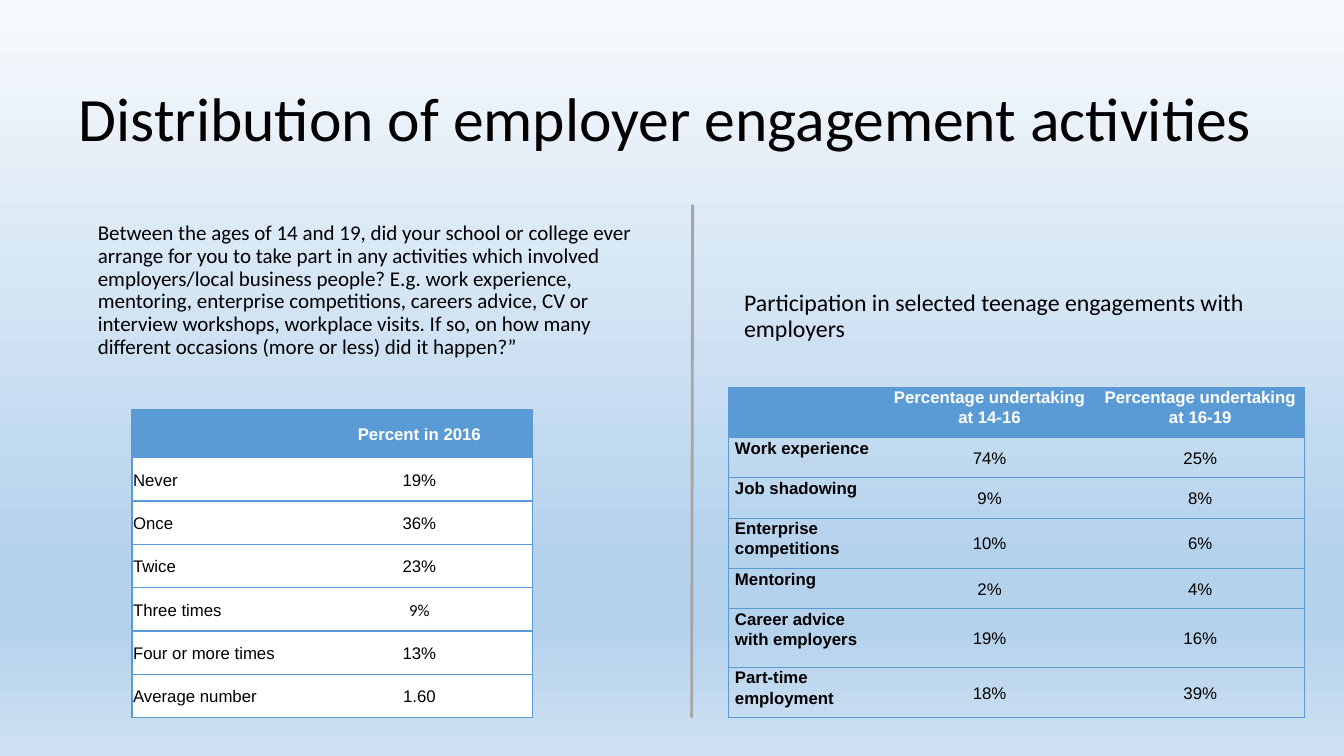
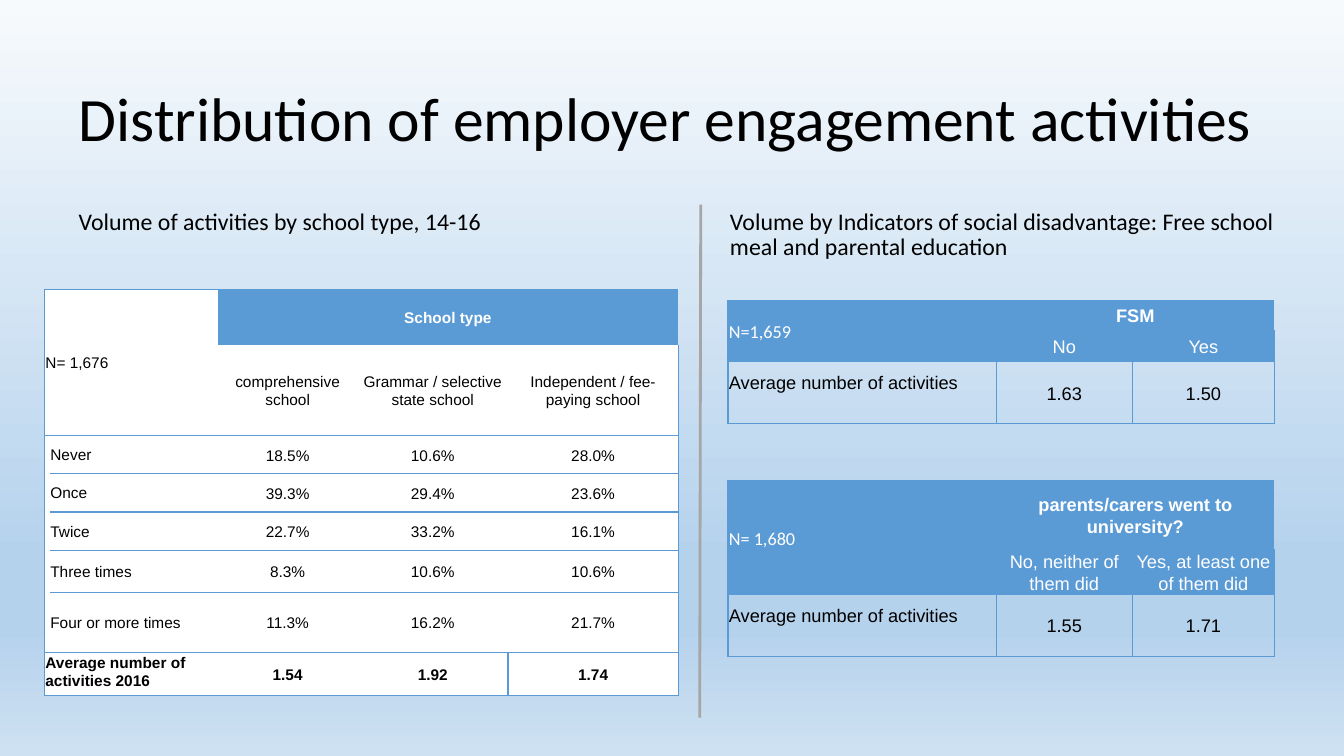
from lxml.etree import SubElement
from pptx import Presentation
from pptx.dml.color import RGBColor
from pptx.enum.shapes import MSO_CONNECTOR
from pptx.enum.text import MSO_ANCHOR, MSO_AUTO_SIZE, PP_ALIGN
from pptx.oxml.ns import qn
from pptx.util import Inches, Pt

BLUE, WHITE, BLACK, GREY = "5B9BD5", "FFFFFF", "000000", "A6A6A6"
BACKGROUND_STOPS = [(0, "F7FAFD"), (74, "B5D2EC"), (83, "B5D2EC"), (100, "CEE1F2")]
PLAIN_TABLE_STYLE = "{2D5ABB26-0587-4C30-8999-92F81FD0307C}"


def color(hex_code):
    return RGBColor.from_string(hex_code)


def write(frame, text, size=12, font="Arial", ink=BLACK, bold=False,
          align=PP_ALIGN.LEFT, spacing=1.07, indent=None):
    paragraph = frame.paragraphs[0]
    if indent is not None:
        properties = paragraph._p.get_or_add_pPr()
        properties.set("marL", str(Inches(indent)))
        properties.set("indent", "0")
        SubElement(properties, qn("a:buNone"))
    paragraph.alignment = align
    paragraph.line_spacing = spacing
    paragraph.space_before = Pt(0)
    run = paragraph.add_run()
    run.text = text
    run.font.size = Pt(size)
    run.font.name = font
    run.font.bold = bold
    run.font.color.rgb = color(ink)


class Deck:
    def __init__(self):
        self.presentation = Presentation()
        self.presentation.slide_width = Inches(13.33)
        self.presentation.slide_height = Inches(7.5)
        self.slide = None
        self.paint_background()

    def paint_background(self):
        master = self.presentation.slide_master
        fill = master.background.fill
        fill.gradient()
        fill.gradient_angle = 270
        stops = master.element.find(".//" + qn("a:gsLst"))
        for stop in list(stops):
            stops.remove(stop)
        for percent, shade in BACKGROUND_STOPS:
            stop = SubElement(stops, qn("a:gs"), pos=str(percent * 1000))
            SubElement(stop, qn("a:srgbClr"), val=shade)

    def new_slide(self, title, divider_x):
        layout = self.presentation.slide_layouts[3]
        self.slide = self.presentation.slides.add_slide(layout)
        self.placeholder(0, title, (0.68, 0.48, 12.21, 1.45), size=44)
        self.divider(divider_x)

    def placeholder(self, index, text, box, **style):
        holder = self.slide.placeholders[index]
        holder.left, holder.top, holder.width, holder.height = map(Inches, box)
        frame = holder.text_frame
        frame.word_wrap = True
        frame.auto_size = MSO_AUTO_SIZE.NONE
        frame.vertical_anchor = MSO_ANCHOR.TOP if index else MSO_ANCHOR.MIDDLE
        write(frame, text, font="Calibri", spacing=0.9, **style)

    def heading(self, index, text, box, size=17, indent=0):
        self.placeholder(index, text, box, size=size, indent=indent)

    def divider(self, x):
        line = self.slide.shapes.add_connector(
            MSO_CONNECTOR.STRAIGHT, Inches(x), Inches(2.03), Inches(x - 0.01), Inches(7.12))
        line.line.color.rgb = color(GREY)
        line.line.width = Pt(2)
        SubElement(line._element.spPr, qn("a:effectLst"))

    def border(self, cell, sides, points=1):
        properties = cell._tc.get_or_add_tcPr()
        for side in "BTRL":
            if side in sides:
                edge = SubElement(properties, qn("a:ln" + side), w=str(Pt(points)))
                SubElement(SubElement(edge, qn("a:solidFill")), qn("a:srgbClr"), val=BLUE)
                properties.insert(0, edge)

    def table(self, corner, widths, heights, texts, look, rows_ruled, columns_ruled,
              merges=(), points=1):
        grid = self.slide.shapes.add_table(
            len(heights), len(widths), *map(Inches, (*corner, sum(widths), sum(heights)))).table
        grid.first_row = grid.horz_banding = False
        grid._tbl.tblPr.find(qn("a:tableStyleId")).text = PLAIN_TABLE_STYLE
        for column, width in zip(grid.columns, widths):
            column.width = Inches(width)
        for row, height in zip(grid.rows, heights):
            row.height = Inches(height)
        owner = {}
        for top, left, bottom, right in merges:
            grid.cell(top, left).merge(grid.cell(bottom, right))
            for r in range(top, bottom + 1):
                for c in range(left, right + 1):
                    owner[r, c] = (top, left)
        for r in range(len(heights)):
            for c in range(len(widths)):
                cell = grid.cell(r, c)
                edges = {"L": (c in columns_ruled, (r, c - 1)),
                         "R": (c + 1 in columns_ruled, (r, c + 1)),
                         "T": (r in rows_ruled, (r - 1, c)),
                         "B": (r + 1 in rows_ruled, (r + 1, c))}
                here = owner.get((r, c), (r, c))
                sides = [side for side, (ruled, neighbour) in edges.items()
                         if ruled and owner.get(neighbour, neighbour) != here]
                self.border(cell, sides, points)
                self.fill_cell(cell, texts[r][c], **look(r, c))
        return grid

    def fill_cell(self, cell, text, fill=None, inset=(0.01, 0.01),
                  anchor=MSO_ANCHOR.MIDDLE, **style):
        if fill:
            cell.fill.solid()
            cell.fill.fore_color.rgb = color(fill)
        else:
            cell.fill.background()
        side, top = inset
        cell.margin_left = cell.margin_right = Inches(side)
        cell.margin_top, cell.margin_bottom = Inches(top), 0
        cell.vertical_anchor = anchor
        if text:
            write(cell.text_frame, text, **style)


def column_align(c):
    return PP_ALIGN.CENTER if c else PP_ALIGN.LEFT


def occasions_look(r, c):
    if r == 0:
        return dict(fill=BLUE, ink=WHITE, bold=True, align=column_align(c))
    font = "Calibri" if (r, c) == (4, 1) else "Arial"
    return dict(fill=WHITE, align=column_align(c), font=font)


def participation_look(r, c):
    header = r == 0
    return dict(fill=BLUE if header else None, ink=WHITE if header else BLACK,
                bold=header or c == 0, align=column_align(c), inset=(0.07, 0),
                anchor=MSO_ANCHOR.TOP if header or c == 0 else MSO_ANCHOR.MIDDLE)


def school_look(r, c):
    style = dict(size=11, fill=WHITE, align=column_align(c // 3), bold=r == 7)
    if r == 0 and c >= 3:
        style.update(fill=BLUE, ink=WHITE, bold=True)
    if r == 7 and c == 0:
        style.update(anchor=MSO_ANCHOR.TOP)
    if c == 1:
        style.update(inset=(0, 0))
    return style


def disadvantage_look(r, c):
    style = dict(size=13, align=column_align(c))
    if r < 2:
        style.update(fill=BLUE, ink=WHITE, bold=r == 0 and c > 0,
                     font="Arial" if c else "Calibri")
    elif c == 0:
        style.update(anchor=MSO_ANCHOR.TOP, inset=(0.01, 0.1))
    return style


def main():
    deck = Deck()
    title = "Distribution of employer engagement activities"

    deck.new_slide(title, 6.87)
    deck.heading(1, "Between the ages of 14 and 19, did your school or college ever arrange for you "
                 "to take part in any activities which involved employers/local business people? "
                 "E.g. work experience, mentoring, enterprise competitions, careers advice, CV or "
                 "interview workshops, workplace visits. If so, on how many different occasions "
                 "(more or less) did it happen?”", (0.68, 2.16, 6, 1.84), size=15, indent=0.19)
    deck.heading(2, "Participation in selected teenage engagements with employers",
                 (7.28, 2.84, 5.67, 0.83))
    occasions = [
        ("", "Percent in 2016"),
        ("Never", "19%"),
        ("Once", "36%"),
        ("Twice", "23%"),
        ("Three times", "9%"),
        ("Four or more times", "13%"),
        ("Average number", "1.60"),
    ]
    deck.table((1.31, 4.06), (1.73, 2.24), [0.48] + [0.43] * 6, occasions, occasions_look,
               range(8), {0, 2})
    participation = [
        ("", "Percentage undertaking at 14-16", "Percentage undertaking at 16-19"),
        ("Work experience", "74%", "25%"),
        ("Job shadowing", "9%", "8%"),
        ("Enterprise competitions", "10%", "6%"),
        ("Mentoring", "2%", "4%"),
        ("Career advice with employers", "19%", "16%"),
        ("Part-time employment", "18%", "39%"),
    ]
    deck.table((7.22, 3.84), (1.54, 2.11, 2.07), (0.5, 0.4, 0.4, 0.5, 0.4, 0.58, 0.5),
               participation, participation_look, {0, 1, 3, 5, 7}, {0, 3}, points=0.75)

    deck.new_slide(title, 6.95)
    deck.heading(1, "Volume of activities by school type, 14-16", (0.68, 2.03, 5.67, 0.83))
    deck.heading(2, "Volume by Indicators of social disadvantage: Free school meal and parental "
                 "education", (6.95, 2.03, 6.14, 0.83), indent=0.19)
    schools = [
        ("N= 1,676", "", "", "School type", "", ""),
        ("", "", "", "comprehensive school", "Grammar / selective state school",
         "Independent / fee-paying school"),
        ("", "Never", "", "18.5%", "10.6%", "28.0%"),
        ("", "Once", "", "39.3%", "29.4%", "23.6%"),
        ("", "Twice", "", "22.7%", "33.2%", "16.1%"),
        ("", "Three times", "", "8.3%", "10.6%", "10.6%"),
        ("", "Four or more times", "", "11.3%", "16.2%", "21.7%"),
        ("Average number of activities 2016", "", "", "1.54", "1.92", "1.74"),
    ]
    school_table = deck.table(
        (0.44, 2.87), (0.04, 1.6, 0.05, 1.39, 1.49, 1.69),
        (0.55, 0.9, 0.38, 0.38, 0.38, 0.42, 0.59, 0.43), schools, school_look,
        {0, *range(2, 9)}, {0, 6},
        merges=[(0, 0, 1, 2), (0, 3, 0, 5), (2, 0, 6, 0), (7, 0, 7, 1)])
    deck.border(school_table.cell(7, 4), "R")
    deck.border(school_table.cell(7, 5), "L")

    indicators = [
        (2.98, (0.3, 0.31, 0.61), "N=1,659", "FSM", ("No", "Yes"), ("1.63", "1.50")),
        (4.77, (0.68, 0.45, 0.61), "N= 1,680", "parents/carers went to university?",
         ("No, neither of them did", "Yes, at least one of them did"), ("1.55", "1.71")),
    ]
    for top, heights, sample, question, answers, averages in indicators:
        rows = [(sample, question, ""), ("", *answers),
                ("Average number of activities", *averages)]
        deck.table((7.22, top), (2.66, 1.35, 1.41), heights, rows, disadvantage_look,
                   range(4), range(4), merges=[(0, 0, 1, 0), (0, 1, 0, 2)])

    deck.presentation.save("out.pptx")


if __name__ == "__main__":
    main()
